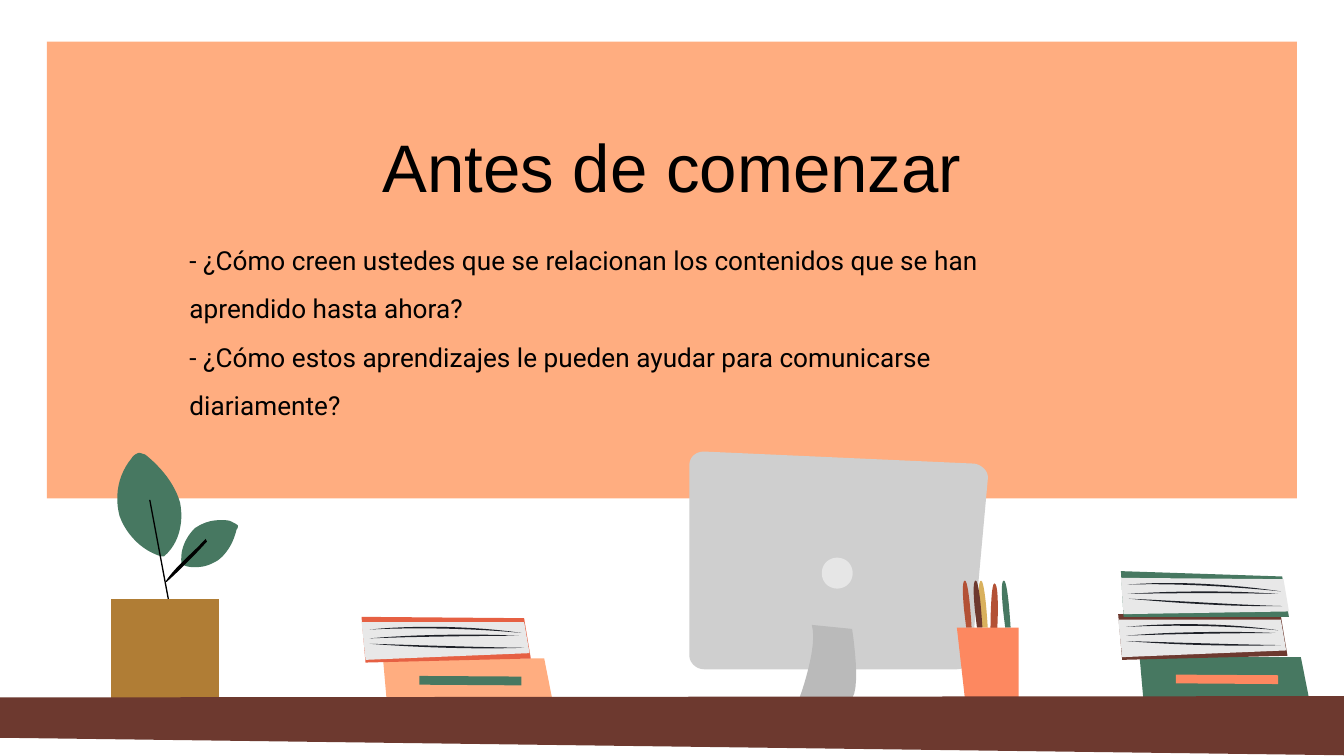
"""Build a question slide with a desk, books, plant and computer."""
from pptx import Presentation, util as u
from pptx.dml.color import RGBColor
from pptx.enum import shapes, text

COLORS = {
    "peach": "FFAD80", "green": "477861", "coral": "FD8860", "maroon": "6D392F",
    "paper": "E8E8E8", "ink": "1E2128", "black": "000000", "screen": "CFCFCF",
    "stand": "BABABA", "badge": "E6E6E6", "rust": "B35135", "gold": "D9B15D",
    "pot": "B07D35", "red": "E66043",
}
COLUMNS, ROWS = 1000, 562.5

deck = Presentation()
deck.slide_width, deck.slide_height = u.Inches(10), u.Inches(5.625)
page = deck.slides.add_slide(deck.slide_layouts[6])
column, row = deck.slide_width / COLUMNS, deck.slide_height / ROWS


def paint(shape, color):
    shape.fill.solid()
    shape.fill.fore_color.rgb = RGBColor.from_string(COLORS[color])
    shape.line.fill.background()
    shape.shadow.inherit = False


def draw(parent, color, steps, left=0, top=0):
    """Fill an outline whose steps are points (2 numbers) or Bezier curves (6)."""
    points = [steps[0]]
    for step in steps[1:]:
        if len(step) == 2:
            points.append(step)
            continue
        corners = [points[-1], step[:2], step[2:4], step[4:]]
        for part in range(1, 13):
            t = part / 12
            weights = ((1 - t) ** 3, 3 * t * (1 - t) ** 2, 3 * t * t * (1 - t), t ** 3)
            points.append(tuple(sum(w * c[axis] for w, c in zip(weights, corners))
                                for axis in (0, 1)))
    places = [((x + left) * column, (y + top) * row) for x, y in points]
    builder = parent.shapes.build_freeform(*places[0], scale=1.0)
    builder.add_line_segments(places[1:], close=True)
    paint(builder.convert_to_shape(), color)


panel = page.shapes.add_shape(shapes.MSO_SHAPE.RECTANGLE, *(
    int(size) for size in (35 * column, 31 * row, 930 * column, 340 * row)))
paint(panel, "peach")

level_book = (
    [(0, 0), (3, 34), (126, 31), (121, 1)],
    [(0, 4), (3, 32), (125, 27), (121, 4)],
    [(6, 20, 40, 21, 85, 22.5, 121, 23), (6, 16, 40, 13, 85, 12.5, 117, 14),
     (6, 9.5, 40, 6, 85, 7, 119, 12)],
)
tilted_book = (
    [(0, 0), (2, 34), (125, 34), (120, 4)],
    [(0, 5), (2, 32), (125, 30), (121, 6)],
    [(6, 20.5, 40, 22, 85, 25, 120, 26), (5, 17, 40, 14.5, 85, 14.5, 117, 17),
     (5, 10, 40, 7, 85, 10, 119, 15)],
)
stacks = [
    (848, 489, "green", "coral",
     [(832, 457, "maroon", level_book), (834, 425, "green", tilted_book)]),
    (285, 490, "peach", "green", [(269, 459, "red", level_book)]),
]
for left, top, base, label, books in stacks:
    stack = page.shapes.add_group_shape()
    draw(stack, base, [(0, 0), (3, 34), (126, 30.5), (120, 0)], left, top)
    draw(stack, label, [(27, 13), (27, 19.5), (103, 20), (103, 13.5)], left, top)
    for x, y, color, (cover, leaves, lines) in books:
        draw(stack, color, cover, x, y)
        draw(stack, "paper", leaves, x, y)
        for x1, y1, x2, y2, x3, y3, x4, y4 in lines:
            draw(stack, "ink", [(x1, y1), (x2, y2, x3, y3, x4, y4),
                                (x3, y3 + 1.7, x2, y2 + 1.7, x1, y1)], x, y)

questions = [
    "- ¿Cómo creen ustedes que se relacionan los contenidos que se han",
    "aprendido hasta ahora?",
    "- ¿Cómo estos aprendizajes le pueden ayudar para comunicarse",
    "diariamente?",
]
blocks = [
    ((197, 78, 606, 69), (10, 15), ["Antes de comenzar"],
     "Arial", 36, text.PP_ALIGN.CENTER, 1, 0),
    ((119, 170, 664, 100), (22, 10), questions,
     "Roboto", 14, text.PP_ALIGN.JUSTIFY, 1.07, 8),
]
for (x, y, width, height), (inset, above), lines, font, size, align, spacing, gap in blocks:
    box = page.shapes.add_textbox(int(x * column), int(y * row),
                                  int(width * column), int(height * row))
    frame = box.text_frame
    frame.word_wrap = True
    frame.margin_left, frame.margin_right = int(inset * column), int(10 * column)
    frame.margin_top, frame.margin_bottom = int(above * row), int(10 * row)
    frame.text = "\n".join(lines)
    for index, para in enumerate(frame.paragraphs):
        para.alignment, para.line_spacing = align, spacing
        para.space_before = u.Pt(gap if index else 0)
        para.font.name, para.font.size = font, u.Pt(size)
        para.font.color.rgb = RGBColor.from_string(COLORS["black"])

computer = [
    ("screen", [(524, 336), (518, 336, 513, 340, 513, 346), (513, 488),
                (513, 493, 518, 498, 524, 498), (712, 498),
                (718, 498, 722, 494, 723, 489), (735, 357),
                (736, 351, 731, 346, 725, 345)]),
    ("stand", [(604, 465), (609, 481, 595, 519, 595, 519), (632, 521),
               (642, 518, 634, 468, 634, 468)]),
    ("badge", [(623, 415), (616.5, 415, 611.5, 420, 611.5, 426.5),
               (611.5, 433, 616.5, 438, 623, 438),
               (629.5, 438, 634.5, 433, 634.5, 426.5),
               (634.5, 420, 629.5, 415, 623, 415)]),
]
pencil = [(4, 0), (0, 0, 5, 35, 5, 35), (9, 35), (9, 35, 7, 0, 4, 0)]
pencils = [("rust", 714), ("gold", 726), ("green", 743)]
upright_pencil = [(740, 434), (737, 434, 737, 469, 737, 469), (742, 469),
                  (742, 469, 744, 435, 740, 434)]
cup = [(712, 467), (718, 520), (758, 519), (758, 467)]
plant = [
    ("green", [(164, 387), (157, 387, 151, 389, 145, 393),
               (138, 400, 134, 409, 135, 419), (136, 420),
               (139, 422, 142, 422, 146, 422), (152, 422, 157, 420, 162, 417),
               (169, 412, 174, 403, 176, 394), (177, 393, 177, 392, 177, 391),
               (176, 390, 174, 389, 172, 388), (170, 387, 167, 387, 164, 387)]),
    ("green", [(104, 337), (102, 337, 99, 339, 98, 341),
               (88, 353, 85, 369, 89, 384), (94, 398, 106, 410, 120, 414),
               (122, 414), (133, 405, 137, 389, 134, 374),
               (130, 360, 120, 348, 109, 339), (108, 338, 107, 338, 104, 337)]),
    ("black", [(111, 372), (126, 452), (127, 452), (112, 372)]),
    ("pot", [(83, 446), (83, 522), (163, 522), (163, 446)]),
    ("black", [(153, 401), (143, 412, 131, 421, 123, 433), (124, 433),
               (134, 424, 145, 413, 154, 403)]),
]

monitor = page.shapes.add_group_shape()
for color, outline in computer:
    draw(monitor, color, outline)
holder = page.shapes.add_group_shape()
for color, left in pencils:
    draw(holder, color, pencil, left, 432)
draw(holder, "rust", upright_pencil)
draw(holder, "maroon", pencil, 722, 432)
draw(holder, "coral", cup)
potted = page.shapes.add_group_shape()
for color, outline in plant:
    draw(potted, color, outline)
draw(page, "maroon", [(COLUMNS, 518), (0, 519), (0, 549), (COLUMNS, 562)])

deck.save("out.pptx")
